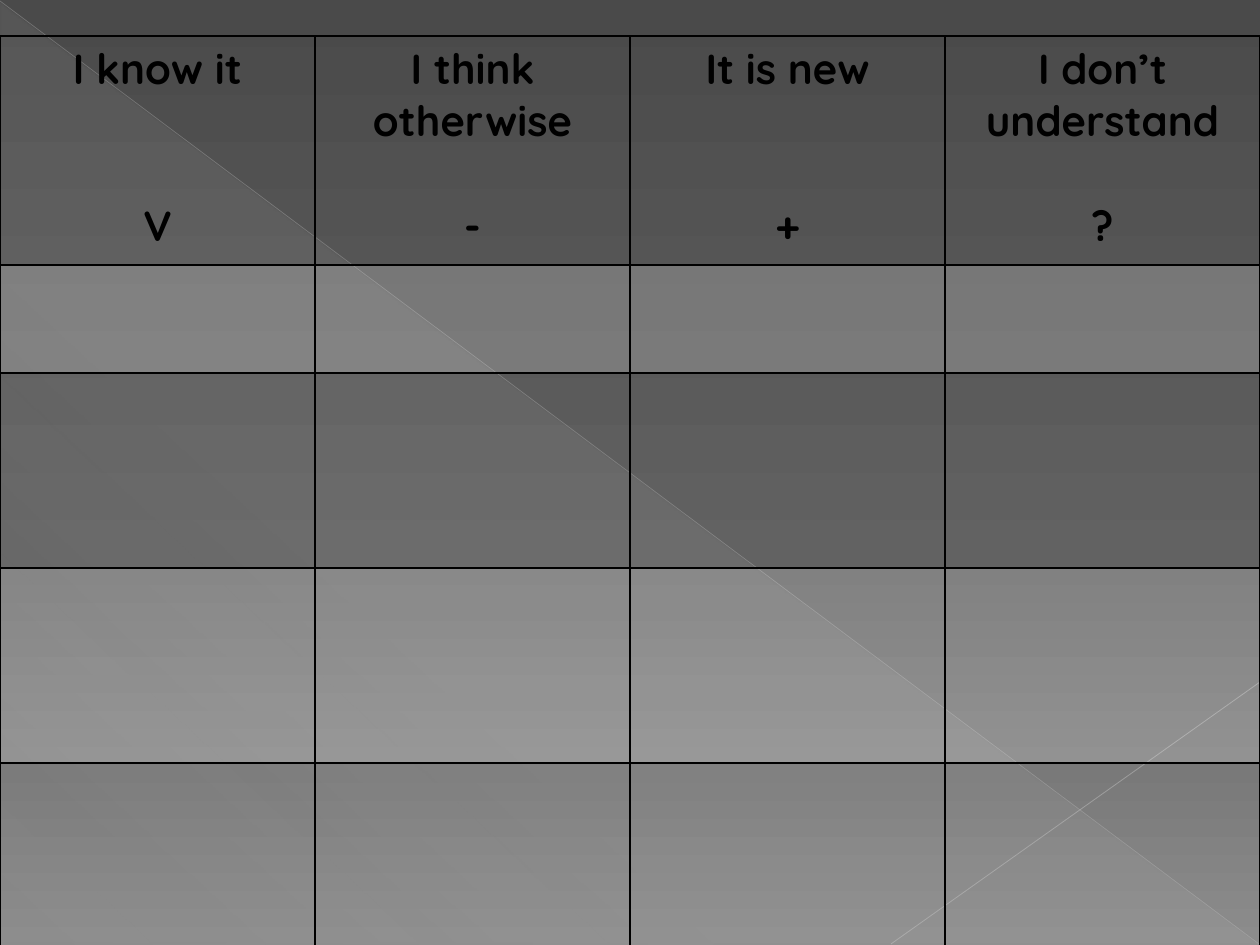
from lxml import etree
from pptx import Presentation
from pptx import util as u
from pptx.dml.color import RGBColor
from pptx.enum import shapes, text
from pptx.oxml import ns

BLACK = RGBColor(0x00, 0x00, 0x00)
WHITE = RGBColor(0xFF, 0xFF, 0xFF)
DARK = RGBColor(0x4A, 0x4A, 0x4A)
MID = RGBColor(0x62, 0x62, 0x62)
GREY = RGBColor(0x8C, 0x8C, 0x8C)
PALE = RGBColor(0xD2, 0xD2, 0xD2)
LONG = RGBColor(0xBF, 0xBF, 0xBF)
SHORT = RGBColor(0xC6, 0xC6, 0xC6)

FONT = "Quicksand"
WIDE, HIGH = 1260, 945
ROWS = [229, 108, 195, 195, 195]
# label, sign, blank lines between them
HEADS = [
    ("I know it", "V", 2),
    ("I think otherwise", "-", 1),
    ("It is new", "+", 2),
    ("I don’t understand", "?", 1),
]
LINE = 30  # points from one 24 pt line to the next


def px(n):
    return u.Emu(round(n * 914400 / 126))


def sub(node, tag, **attrs):
    return etree.SubElement(node, ns.qn(tag), **attrs)


def fade(node, alpha):
    """Set the opacity, in percent, of the first RGB colour below node."""
    sub(node.find(".//" + ns.qn("a:srgbClr")), "a:alpha", val=str(alpha * 1000))


def blend(fill, node, stops, angle):
    """Fill with (position, colour, opacity) stops; angle runs clockwise."""
    fill.gradient()
    fill.gradient_angle = 360 - angle
    group = node.find(".//" + ns.qn("a:gsLst"))
    for old in list(group):
        group.remove(old)
    for pos, color, alpha in stops:
        stop = sub(group, "a:gs", pos=str(pos * 1000))
        sub(stop, "a:srgbClr", val=str(color))
        if alpha < 100:
            fade(stop, alpha)


def write(para, words, size=24, color=BLACK, bold=True, before=0):
    para.alignment = text.PP_ALIGN.CENTER
    para.space_before = u.Pt(before)
    run = para.add_run()
    run.text = words
    run.font.name, run.font.size = FONT, u.Pt(size)
    run.font.bold, run.font.color.rgb = bold, color


def ray(slide, start, end, color, width, alpha):
    line = slide.shapes.add_connector(
        shapes.MSO_CONNECTOR.STRAIGHT, *map(px, start + end))
    line.line.color.rgb = color
    line.line.width = u.Pt(width)
    props = line.element.spPr
    fade(props, alpha)
    sub(props, "a:effectLst")


def backdrop(slide, x, y, w, h):
    blend(slide.background.fill, slide.element,
          [(0, DARK, 100), (60, MID, 100), (100, GREY, 100)], 90)
    wedge = slide.shapes.add_shape(
        shapes.MSO_SHAPE.RIGHT_TRIANGLE,
        px(x + 1), px(y + 3), px(w - 2), px(h - 3))
    wedge.shadow.inherit = False
    wedge.line.fill.background()
    blend(wedge.fill, wedge.element.spPr,
          [(0, PALE, 10), (70, PALE, 8), (100, PALE, 1)], 133)
    ray(slide, (x, y + 1), (x + w - 1, y + h - 1), LONG, 0.39, 35)
    ray(slide, (x + w, y + 682), (x + 891, y + h - 1), SHORT, 0.47, 45)


def frame(cell):
    props = cell._tc.get_or_add_tcPr()
    for side in "LRTB":
        edge = sub(props, "a:ln" + side, w=str(u.Pt(1)))
        sub(sub(edge, "a:solidFill"), "a:srgbClr", val=str(BLACK))


def tint(cell, light):
    if light:
        cell.fill.solid()
        cell.fill.fore_color.rgb = WHITE
        fade(cell._tc.tcPr.find(ns.qn("a:solidFill")), 20)
    else:
        cell.fill.background()


def chart(slide, x, y, w):
    """Draw the reading chart: a heading row over empty rows to fill in."""
    grid = slide.shapes.add_table(
        len(ROWS), len(HEADS), px(x), px(y), px(w), px(sum(ROWS))).table
    grid.first_row = grid.horz_banding = False
    for col in grid.columns:
        col.width = px(w / len(HEADS))
    for i, high in enumerate(ROWS):
        grid.rows[i].height = px(high)
        for j in range(len(HEADS)):
            cell = grid.cell(i, j)
            frame(cell)
            tint(cell, i % 2 == 1)
    for j, (label, sign, gap) in enumerate(HEADS):
        body = grid.cell(0, j).text_frame
        write(body.paragraphs[0], label)
        write(body.add_paragraph(), sign, before=gap * LINE)


def main():
    deck = Presentation()
    deck.slide_width, deck.slide_height = px(WIDE), px(HIGH)
    slide = deck.slides.add_slide(deck.slide_layouts[6])
    backdrop(slide, 0, 0, WIDE, HIGH)
    chart(slide, 0, 36, WIDE)
    deck.save("out.pptx")


if __name__ == "__main__":
    main()
